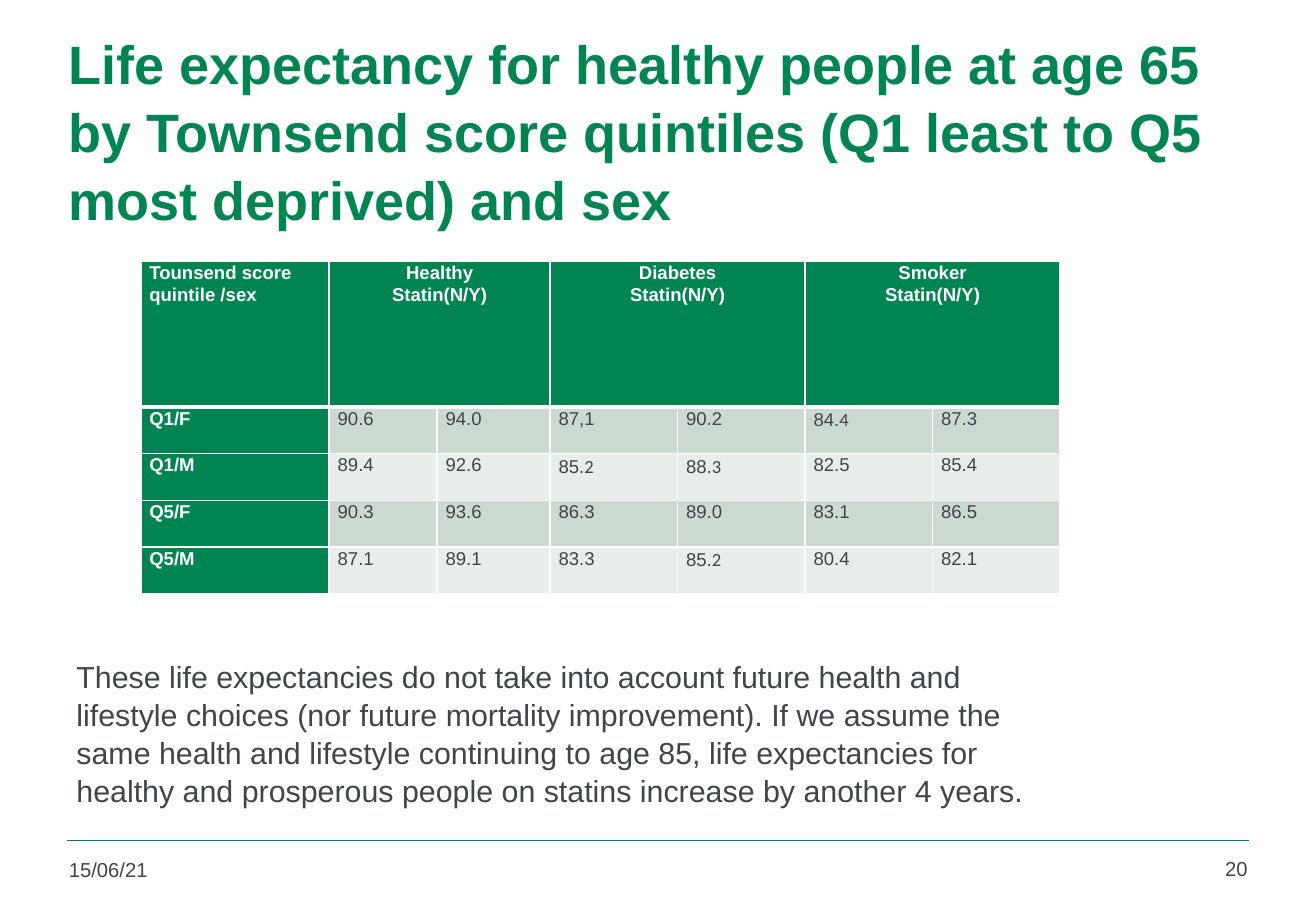
from pptx import Presentation
from pptx.dml.color import RGBColor as Rgb
from pptx.enum.shapes import MSO_CONNECTOR as Connector
from pptx.enum.text import MSO_ANCHOR as Anchor, PP_ALIGN as Align
from pptx.oxml.ns import qn
from pptx.util import Pt
from lxml.etree import SubElement

COLOURS = {
    "green": "008452",
    "ink": "3F4548",
    "white": "FFFFFF",
    "band_dark": "CCD9D1",
    "band_light": "E7EDE9",
}

TITLE = ("Life expectancy for healthy people at age 65 by Townsend score "
         "quintiles (Q1 least to Q5 most deprived) and sex")
REMARK = ("These life expectancies do not take into account future health and "
          "lifestyle choices (nor future mortality improvement). If we assume the "
          "same health and lifestyle continuing to age 85, life expectancies for "
          "healthy and prosperous people on statins increase by another 4 years.")
GROUPS = ["Healthy", "Diabetes", "Smoker"]
EXPECTANCIES = {
    "Q1/F": ["90.6", "94.0", "87,1", "90.2", "84.4", "87.3"],
    "Q1/M": ["89.4", "92.6", "85.2", "88.3", "82.5", "85.4"],
    "Q5/F": ["90.3", "93.6", "86.3", "89.0", "83.1", "86.5"],
    "Q5/M": ["87.1", "89.1", "83.3", "85.2", "80.4", "82.1"],
}
CALIBRI_ENDINGS = {"84.4", "85.2", "88.3"}  # last digit set in Calibri
COLUMN_WIDTHS = [111.6, 64, 67] + [75.6] * 4
HEADER_HEIGHT, ROW_HEIGHT = 86.4, 27.7


def colour(name):
    return Rgb.from_string(COLOURS[name])


def write(para, text, size=11, ink="ink", bold=False, font="Arial",
          align=Align.LEFT, spacing=1.0):
    """Append a formatted span to a paragraph."""
    para.alignment = align
    para.line_spacing = spacing
    span = para.add_run()
    span.text = text
    span.font.name, span.font.size, span.font.bold = font, Pt(size), bold
    span.font.color.rgb = colour(ink)


class Page:
    def __init__(self, deck):
        self.shapes = deck.slides.add_slide(deck.slide_layouts[6]).shapes

    def text(self, left, top, width, height, text, anchor=Anchor.TOP,
             right_inset=7.2, **style):
        box = self.shapes.add_textbox(Pt(left), Pt(top), Pt(width), Pt(height))
        frame = box.text_frame
        frame.word_wrap = True
        frame.vertical_anchor = anchor
        frame.margin_right = Pt(right_inset)
        write(frame.paragraphs[0], text, **style)

    def line(self, left, top, right, ink):
        rule = self.shapes.add_connector(
            Connector.STRAIGHT, Pt(left), Pt(top), Pt(right), Pt(top))
        rule.line.color.rgb = colour(ink)
        rule.line.width = Pt(1)
        SubElement(rule.element.spPr, qn("a:effectLst"))

    def table(self, left, top, widths, heights):
        frame = self.shapes.add_table(
            len(heights), len(widths), Pt(left), Pt(top),
            Pt(sum(widths)), Pt(sum(heights)))
        grid = frame.table
        grid.first_row = grid.horz_banding = False
        for column, width in zip(grid.columns, widths):
            column.width = Pt(width)
        for row, height in zip(grid.rows, heights):
            row.height = Pt(height)
        return grid

    def cell(self, grid, row, column, fill, lines=(), **style):
        cell = grid.cell(row, column)
        cell.margin_left = cell.margin_right = Pt(5)
        cell.margin_top = cell.margin_bottom = 0
        # Borders come before the fill; the header has a heavier lower edge
        edges = {"lnL": 1, "lnR": 1, "lnT": 3 if row == 1 else 1,
                 "lnB": 3 if row == 0 else 1}
        properties = cell._tc.get_or_add_tcPr()
        for edge, width in edges.items():
            border = SubElement(properties, qn(f"a:{edge}"), w=str(Pt(width)))
            solid = SubElement(border, qn("a:solidFill"))
            SubElement(solid, qn("a:srgbClr"), val=COLOURS["white"])
        cell.fill.solid()
        cell.fill.fore_color.rgb = colour(fill)
        for index, text in enumerate(lines):
            frame = cell.text_frame
            para = frame.add_paragraph() if index else frame.paragraphs[0]
            if text in CALIBRI_ENDINGS:
                write(para, text[:-1], spacing=1.07, **style)
                write(para, text[-1], spacing=1.07, font="Calibri", **style)
            else:
                write(para, text, spacing=1.07, **style)


def main():
    deck = Presentation()
    deck.slide_width, deck.slide_height = Pt(780), Pt(540)
    page = Page(deck)

    # Title
    page.text(33.8, 31.7, 730.8, 90, TITLE, anchor=Anchor.MIDDLE, right_inset=20,
              size=32, ink="green", bold=True, spacing=1.05)

    # Table header
    grid = page.table(83.5, 154.8, COLUMN_WIDTHS,
                      [HEADER_HEIGHT] + [ROW_HEIGHT] * len(EXPECTANCIES))
    label = {"ink": "white", "bold": True}
    page.cell(grid, 0, 0, "green", ["Tounsend score quintile /sex"], **label)
    for index, group in enumerate(GROUPS):
        column = 1 + 2 * index
        page.cell(grid, 0, column, "green", [group, "Statin(N/Y)"],
                  align=Align.CENTER, **label)
        page.cell(grid, 0, column + 1, "green")
        grid.cell(0, column).merge(grid.cell(0, column + 1))

    # Table body
    for row, (quintile, values) in enumerate(EXPECTANCIES.items(), start=1):
        page.cell(grid, row, 0, "green", [quintile], **label)
        band = "band_dark" if row % 2 else "band_light"
        for column, value in enumerate(values, start=1):
            page.cell(grid, row, column, band, [value])

    # Remark
    page.text(38.2, 385.2, 601.2, 94.3, REMARK, size=18, spacing=1.05)

    # Footer
    page.line(39.6, 498.2, 740.2, "green")
    page.text(33.8, 504.7, 172, 26, "15/06/21", size=12)
    page.text(691.2, 504, 55.4, 26.6, "20", size=12, align=Align.RIGHT)

    deck.save("out.pptx")


if __name__ == "__main__":
    main()
